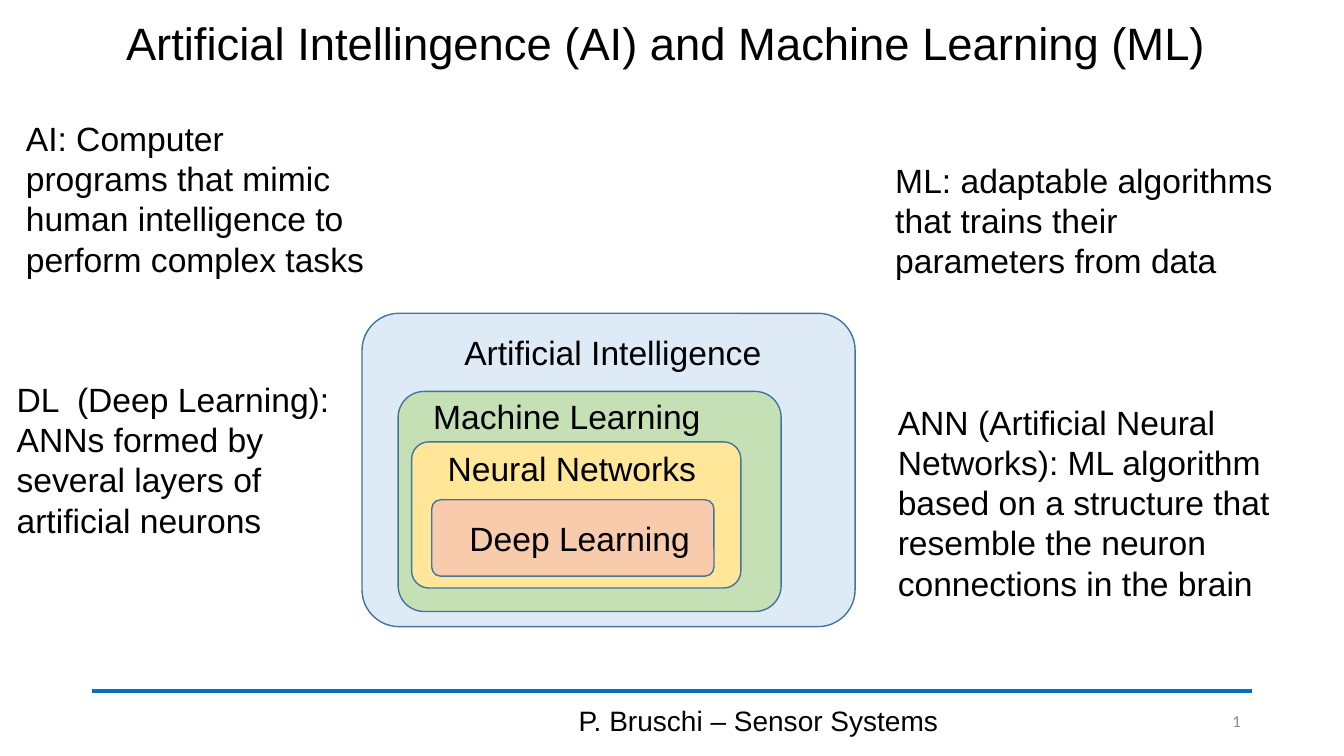
from dataclasses import dataclass
from lxml.etree import SubElement
from pptx import Presentation
from pptx.dml.color import RGBColor
from pptx.enum.shapes import MSO_CONNECTOR, MSO_SHAPE
from pptx.enum.text import MSO_ANCHOR, MSO_AUTO_SIZE, PP_ALIGN
from pptx.oxml.ns import qn
from pptx.util import Inches, Pt

WIDTH, HEIGHT = Inches(13.33), Inches(7.5)
COL, ROW = WIDTH / 16, HEIGHT / 9


@dataclass(frozen=True)
class Theme:
    font: str = "Arial"
    number_font: str = "Calibri"
    title: float = 32.4
    body: float = 24
    footer: float = 20
    number: float = 12
    outline_width: float = 1
    rule_width: float = 2.75
    corner: float = 0.118
    ink: str = "000000"
    muted: str = "8C8C8C"
    rule: str = "0070C0"
    outline: str = "43739E"
    ai: str = "DEEBF7"
    ml: str = "C5E0B4"
    nn: str = "FFE699"
    dl: str = "F8CBAD"


T = Theme()


def assign(target, values):
    for name, value in values.items():
        setattr(target, name, value)


def grid(x, y, w, h):
    return [round(v) for v in (x * COL, y * ROW, w * COL, h * ROW)]


def within(box, x, y, w, h):
    return box[0] + x, box[1] + y, w, h


def style(font, size, name=T.font, color=T.ink):
    assign(font, {"size": Pt(size), "name": name})
    font.color.rgb = RGBColor.from_string(color)


def text(s, box, words, size=T.body, align=PP_ALIGN.LEFT, **frame):
    tf = s.shapes.add_textbox(*grid(*box)).text_frame
    assign(tf, {"word_wrap": True, "auto_size": MSO_AUTO_SIZE.SHAPE_TO_FIT_TEXT, **frame})
    p = tf.paragraphs[0]
    p.alignment = align
    r = p.add_run()
    r.text = words
    style(r.font, size)
    return p


def title(s, box, words):
    sp = s.shapes.title
    assign(sp, dict(zip(("left", "top", "width", "height"), grid(*box))))
    tf = sp.text_frame
    tf.text = words
    assign(tf, {"vertical_anchor": MSO_ANCHOR.MIDDLE, "auto_size": MSO_AUTO_SIZE.NONE, "word_wrap": True})
    p = tf.paragraphs[0]
    assign(p, {"alignment": PP_ALIGN.CENTER, "line_spacing": 0.9})
    style(p.runs[0].font, T.title)


def nested_fields(s, box):
    levels = [
        ("Artificial Intelligence", T.ai, (0, 0, 5.87, 3.73), (1.1, 0.16, 3.82, 0.6)),
        ("Machine Learning", T.ml, (0.43, 0.93, 4.56, 2.62), (0.73, 0.93, 3.46, 0.6)),
        ("Neural Networks", T.nn, (0.59, 1.53, 3.92, 1.74), (0.9, 1.54, 3.23, 0.6)),
        ("Deep Learning", T.dl, (0.83, 2.22, 3.36, 0.91), (1.16, 2.38, 2.89, 0.6)),
    ]
    for words, fill, area, label in levels:
        sp = s.shapes.add_shape(MSO_SHAPE.ROUNDED_RECTANGLE, *grid(*within(box, *area)))
        sp.adjustments[0] = T.corner
        sp.shadow.inherit = False
        sp.fill.solid()
        sp.fill.fore_color.rgb = RGBColor.from_string(fill)
        sp.line.color.rgb = RGBColor.from_string(T.outline)
        sp.line.width = Pt(T.outline_width)
        text(s, within(box, *label), words, word_wrap=False)


def definitions(s, box):
    notes = [
        ("AI: Computer programs that mimic human intelligence to perform complex tasks",
         (0.19, 0.12, 4.33, 2.06)),
        ("ML: adaptable algorithms that trains their parameters from data",
         (10.54, 0.62, 4.86, 1.57)),
        ("ANN (Artificial Neural Networks): ML algorithm based on a structure that "
         "resemble the neuron connections in the brain", (10.57, 3.5, 4.86, 2.54)),
        ("DL  (Deep Learning): ANNs formed by several layers of artificial neurons",
         (0.08, 3.23, 3.97, 2.06)),
    ]
    for words, area in notes:
        text(s, within(box, *area), words)


def footer(s, box):
    x, y, w, h = grid(*box)
    rule = s.shapes.add_connector(MSO_CONNECTOR.STRAIGHT, x, y, x + w, y)
    rule.line.color.rgb = RGBColor.from_string(T.rule)
    rule.line.width = Pt(T.rule_width)
    SubElement(rule._element.spPr, qn("a:effectLst"))
    frame = {"vertical_anchor": MSO_ANCHOR.MIDDLE, "auto_size": MSO_AUTO_SIZE.NONE}
    text(s, within(box, 4.2, 0.11, 7.46, 0.48), "P. Bruschi – Sensor Systems",
         T.footer, PP_ALIGN.CENTER, **frame)
    p = text(s, within(box, 12.64, 0.11, 1.15, 0.48), "1", T.number, PP_ALIGN.RIGHT, **frame)
    r = p.runs[0]
    style(r.font, T.number, T.number_font, T.muted)
    field = SubElement(p._p, qn("a:fld"), type="slidenum",
                       id="{B6F15528-21DE-4FAA-801E-634DDDAF4B2B}")
    field.extend(list(r._r))
    p._p.remove(r._r)


def main():
    prs = Presentation()
    assign(prs, {"slide_width": WIDTH, "slide_height": HEIGHT})
    s = prs.slides.add_slide(prs.slide_layouts[5])
    title(s, (1.1, 0.12, 13.8, 0.86), "Artificial Intellingence (AI) and Machine Learning (ML) ")
    nested_fields(s, (4.31, 3.73, 5.87, 3.73))
    definitions(s, (0, 1.22, 16, 6.5))
    footer(s, (1.1, 8.23, 13.8, 0.77))
    prs.save("out.pptx")


if __name__ == "__main__":
    main()
